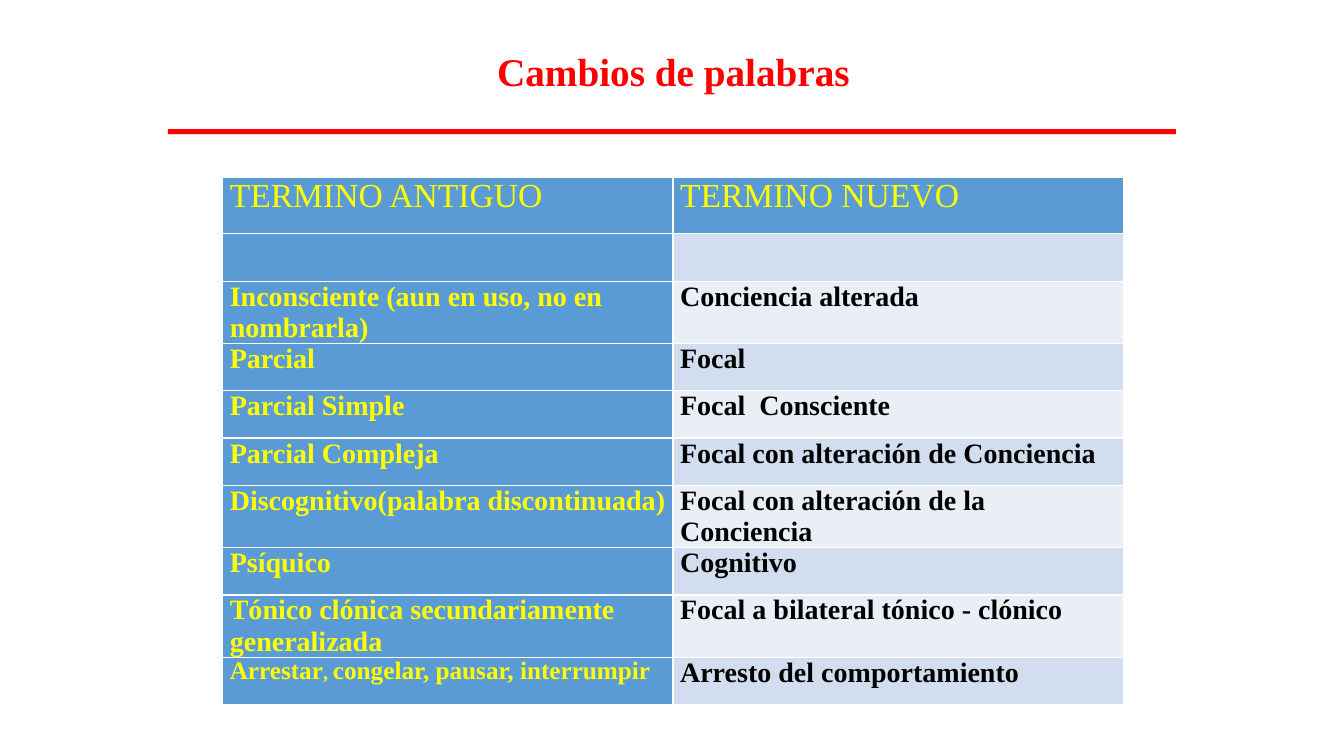
from dataclasses import dataclass
from pptx import Presentation
from pptx.dml.color import RGBColor
from pptx.enum.shapes import MSO_SHAPE
from pptx.enum.text import MSO_AUTO_SIZE
from pptx.oxml import parse_xml
from pptx.oxml.ns import nsdecls
from pptx.util import Inches, Pt


@dataclass(frozen=True)
class Theme:
    font: str = "Times New Roman"
    red: str = "FF0000"
    yellow: str = "FFFF00"
    black: str = "000000"
    white: str = "FFFFFF"
    blue: str = "5B9BD5"
    bands: tuple = ("D2DEEF", "EAEFF7")
    title: int = 28
    head: int = 24
    body: int = 20
    small: int = 18
    comma: int = 14
    border: int = 1


class Page:
    COLS, ROWS = 40, 30

    def __init__(self, deck, theme):
        self.theme = theme
        self.slide = deck.slides.add_slide(deck.slide_layouts[6])
        self.unit_x = deck.slide_width / self.COLS
        self.unit_y = deck.slide_height / self.ROWS

    def box(self, left, top, width, height):
        return (round(left * self.unit_x), round(top * self.unit_y),
                round(width * self.unit_x), round(height * self.unit_y))

    def text(self, frame, runs, color, bold=True):
        line = frame.paragraphs[0]
        for words, size in runs:
            run = line.add_run()
            run.text = words
            font = run.font
            font.name, font.size, font.bold = self.theme.font, Pt(size), bold
            font.color.rgb = RGBColor.from_string(color)

    def title(self, words, *place):
        frame = self.slide.shapes.add_textbox(*self.box(*place)).text_frame
        frame.word_wrap = False
        frame.auto_size = MSO_AUTO_SIZE.SHAPE_TO_FIT_TEXT
        self.text(frame, [(words, self.theme.title)], self.theme.red)

    def bar(self, *place):
        bar = self.slide.shapes.add_shape(MSO_SHAPE.RECTANGLE, *self.box(*place))
        bar.shadow.inherit = False
        bar.fill.solid()
        bar.fill.fore_color.rgb = RGBColor.from_string(self.theme.red)
        bar.line.fill.background()

    def cell(self, cell, runs, fill, color, bold):
        cell.fill.solid()
        cell.fill.fore_color.rgb = RGBColor.from_string(fill)
        cell.margin_left = cell.margin_right = Inches(0.07)
        cell.margin_top = cell.margin_bottom = 0
        props = cell._tc.get_or_add_tcPr()
        for spot, side in enumerate("LRTB"):
            props.insert(spot, parse_xml(
                f'<a:ln{side} {nsdecls("a")} w="{Pt(self.theme.border)}"><a:solidFill>'
                f'<a:srgbClr val="{self.theme.white}"/></a:solidFill></a:ln{side}>'))
        self.text(cell.text_frame, runs, color, bold)

    def table(self, rows, left, top, width, head, step):
        theme = self.theme
        height = head + step * (len(rows) - 1)
        table = self.slide.shapes.add_table(
            len(rows), 2, *self.box(left, top, width, height)).table
        table.horz_banding = False
        for i, row in enumerate(rows):
            first = i == 0
            table.rows[i].height = round((head if first else step) * self.unit_y)
            for j, item in enumerate(row):
                size = theme.head if first else theme.body
                runs = item if isinstance(item, list) else [(item, size)] if item else []
                key = first or j == 0
                self.cell(table.cell(i, j), runs,
                          theme.blue if key else theme.bands[(i - 1) % 2],
                          theme.yellow if key else theme.black, not first)


def main():
    deck = Presentation()
    deck.slide_width, deck.slide_height = Inches(13.33), Inches(7.5)
    theme = Theme()
    arrest = [("Arrestar", theme.small), (", ", theme.comma),
              ("congelar, pausar, interrumpir", theme.small)]
    terms = [
        ("TERMINO ANTIGUO", "TERMINO NUEVO"),
        ("", ""),
        ("Inconsciente (aun en uso, no en nombrarla)", "Conciencia alterada"),
        ("Parcial", "Focal"),
        ("Parcial Simple", "Focal  Consciente"),
        ("Parcial Compleja", "Focal con alteración de Conciencia"),
        ("Discognitivo(palabra discontinuada)", "Focal con alteración de la Conciencia"),
        ("Psíquico", "Cognitivo"),
        ("Tónico clónica secundariamente generalizada", "Focal a bilateral tónico - clónico"),
        (arrest, "Arresto del comportamiento"),
    ]
    page = Page(deck, theme)
    page.bar(5, 5.12, 30, 0.2)
    page.table(terms, left=6.63, top=7.04, width=26.8, head=2.24, step=1.88)
    page.title("Cambios de palabras", 14.5, 1.68, 11.22, 2.28)
    deck.save("out.pptx")


if __name__ == "__main__":
    main()
